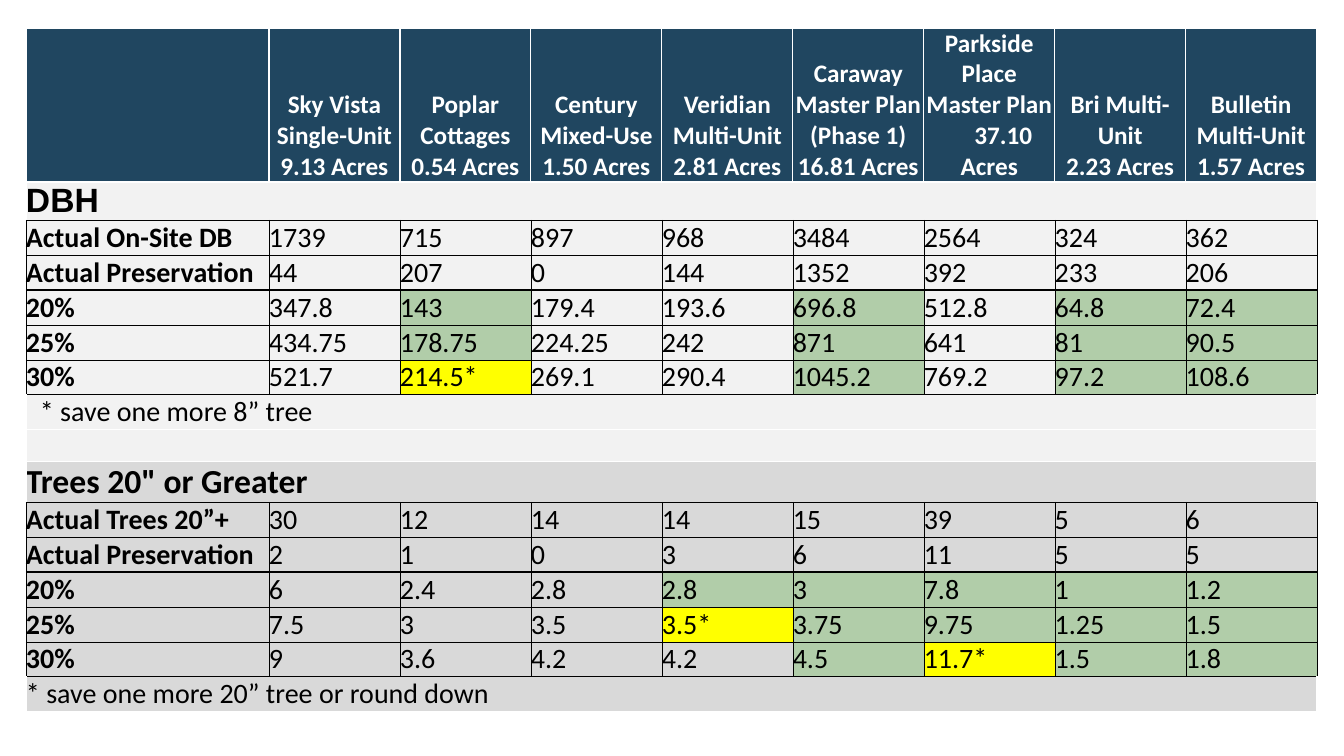
from dataclasses import dataclass

from lxml import etree
from pptx import Presentation
from pptx.dml.color import RGBColor
from pptx.enum.text import MSO_ANCHOR, PP_ALIGN
from pptx.oxml.ns import qn
from pptx.util import Pt

BOTTOM, CENTER, LEFT = MSO_ANCHOR.BOTTOM, PP_ALIGN.CENTER, PP_ALIGN.LEFT

SITES = [
    ["Sky Vista Single-Unit 9.13 Acres"],
    ["Poplar", "Cottages 0.54 Acres"],
    ["Century Mixed-Use 1.50 Acres"],
    ["Veridian Multi-Unit 2.81 Acres"],
    ["Caraway Master Plan", "(Phase 1) 16.81 Acres"],
    ["Parkside Place", "Master Plan", "37.10", "Acres"],
    ["Bri Multi-Unit", "2.23 Acres"],
    ["Bulletin Multi-Unit 1.57 Acres"],
]
DBH = [
    ("Actual On-Site DB", "1739 715 897 968 3484 2564 324 362"),
    ("Actual Preservation", "44 207 0 144 1352 392 233 206"),
    ("20%", "347.8 143 179.4 193.6 696.8 512.8 64.8 72.4"),
    ("25%", "434.75 178.75 224.25 242 871 641 81 90.5"),
    ("30%", "521.7 214.5* 269.1 290.4 1045.2 769.2 97.2 108.6"),
]
TREES = [
    ("Actual Trees 20”+", "30 12 14 14 15 39 5 6"),
    ("Actual Preservation", "2 1 0 3 6 11 5 5"),
    ("20%", "6 2.4 2.8 2.8 3 7.8 1 1.2"),
    ("25%", "7.5 3 3.5 3.5* 3.75 9.75 1.25 1.5"),
    ("30%", "9 3.6 4.2 4.2 4.5 11.7* 1.5 1.8"),
]


@dataclass(frozen=True)
class Theme:
    navy: str = "204660"
    light: str = "F2F2F2"
    grey: str = "D9D9D9"
    green: str = "B1CDA9"
    yellow: str = "FFFF00"
    white: str = "FFFFFF"
    black: str = "000000"
    font: str = "Calibri"
    alt_font: str = "Arial"
    head: int = 18
    body: int = 20
    title: int = 24


T = Theme()
WHITE_LINE, THIN, THICK = (T.white, 1), (T.black, 0.25), (T.black, 2.25)

SLIDE_W, SLIDE_H = 1344, 756
LEFT_X, TOP_Y = 26, 28
COLS = [243] + [131] * len(SITES)
DATA_ROWS = [35, 35, 35, 35, 34]
ROWS = [154, 38, *DATA_ROWS, 35, 32, 41, *DATA_ROWS, 35]
DBH_ROW, GAP_ROW, TREES_ROW = 1, 8, 9
PRESERVED = 1  # index of the preservation row within a section


def px(n):
    return round(n * 914400 / 100.8)


def frame(cell, fill, left, right, top, bottom):
    """Set the cell's borders, fill, margins and anchor."""
    tc_pr = cell._tc.get_or_add_tcPr()
    for side, (color, width) in zip("LRTB", (left, right, top, bottom)):
        ln = etree.SubElement(tc_pr, qn(f"a:ln{side}"), w=str(Pt(width)))
        solid = etree.SubElement(ln, qn("a:solidFill"))
        etree.SubElement(solid, qn("a:srgbClr"), val=color)
    cell.fill.solid()
    cell.fill.fore_color.rgb = RGBColor.from_string(fill)
    cell.margin_left = cell.margin_right = cell.margin_top = cell.margin_bottom = 0
    cell.vertical_anchor = BOTTOM


def write(cell, lines, size, color=T.black, bold=False, font=T.font, align=LEFT):
    cell.text = "\n".join(lines)
    for p in cell.text_frame.paragraphs:
        p.alignment = align
        p.font.size, p.font.bold, p.font.name = Pt(size), bold, font
        p.font.color.rgb = RGBColor.from_string(color)


def merged_row(table, row, fill, top=WHITE_LINE, bottom=WHITE_LINE):
    for col in range(len(COLS)):
        frame(table.cell(row, col), fill, WHITE_LINE, WHITE_LINE, top, bottom)
    first = table.cell(row, 0)
    first.merge(table.cell(row, len(COLS) - 1))
    return first


def value_fill(index, text, preserved, base):
    """Yellow for a starred near miss, green for a target that is met."""
    if text.endswith("*"):
        return T.yellow
    met = index > PRESERVED and float(text) <= float(preserved)
    return T.green if met else base


def section(table, start, title, title_font, data, note, fill):
    cell = merged_row(table, start, fill, bottom=THIN)
    write(cell, [title], T.title, bold=True, font=title_font)
    preserved = data[PRESERVED][1].split()
    for i, (label, values) in enumerate(data):
        row = start + 1 + i
        top = THICK if i == PRESERVED + 1 else THIN
        bottom = THICK if i == PRESERVED else THIN
        cell = table.cell(row, 0)
        frame(cell, fill, THIN, THIN, top, bottom)
        write(cell, [label], T.body, bold=True)
        for col, (text, saved) in enumerate(zip(values.split(), preserved), 1):
            cell = table.cell(row, col)
            frame(cell, value_fill(i, text, saved, fill), THIN, THIN, top, bottom)
            write(cell, [text], T.body)
    cell = merged_row(table, start + 1 + len(data), fill, top=THIN)
    write(cell, [note], T.body)
    return cell


def main():
    prs = Presentation()
    prs.slide_width, prs.slide_height = px(SLIDE_W), px(SLIDE_H)
    s = prs.slides.add_slide(prs.slide_layouts[6])
    table = s.shapes.add_table(len(ROWS), len(COLS), px(LEFT_X), px(TOP_Y),
                               px(sum(COLS)), px(sum(ROWS))).table
    table.first_row = table.horz_banding = False
    for column, width in zip(table.columns, COLS):
        column.width = px(width)
    for row, height in zip(table.rows, ROWS):
        row.height = px(height)

    for col, lines in enumerate([[]] + SITES):
        cell = table.cell(0, col)
        frame(cell, T.navy, *[WHITE_LINE] * 4)
        if lines:
            write(cell, lines, T.head, T.white, bold=True, align=CENTER)
        for p in cell.text_frame.paragraphs:
            if p.text == "37.10":
                p._p.get_or_add_pPr().set("marL", str(px(28)))

    note = section(table, DBH_ROW, "DBH", T.alt_font, DBH,
                   "* save one more 8” tree", T.light)
    note.margin_left = px(14)
    merged_row(table, GAP_ROW, T.light)
    section(table, TREES_ROW, 'Trees 20" or Greater', T.font, TREES,
            "* save one more 20” tree or round down", T.grey)
    prs.save("out.pptx")


if __name__ == "__main__":
    main()
